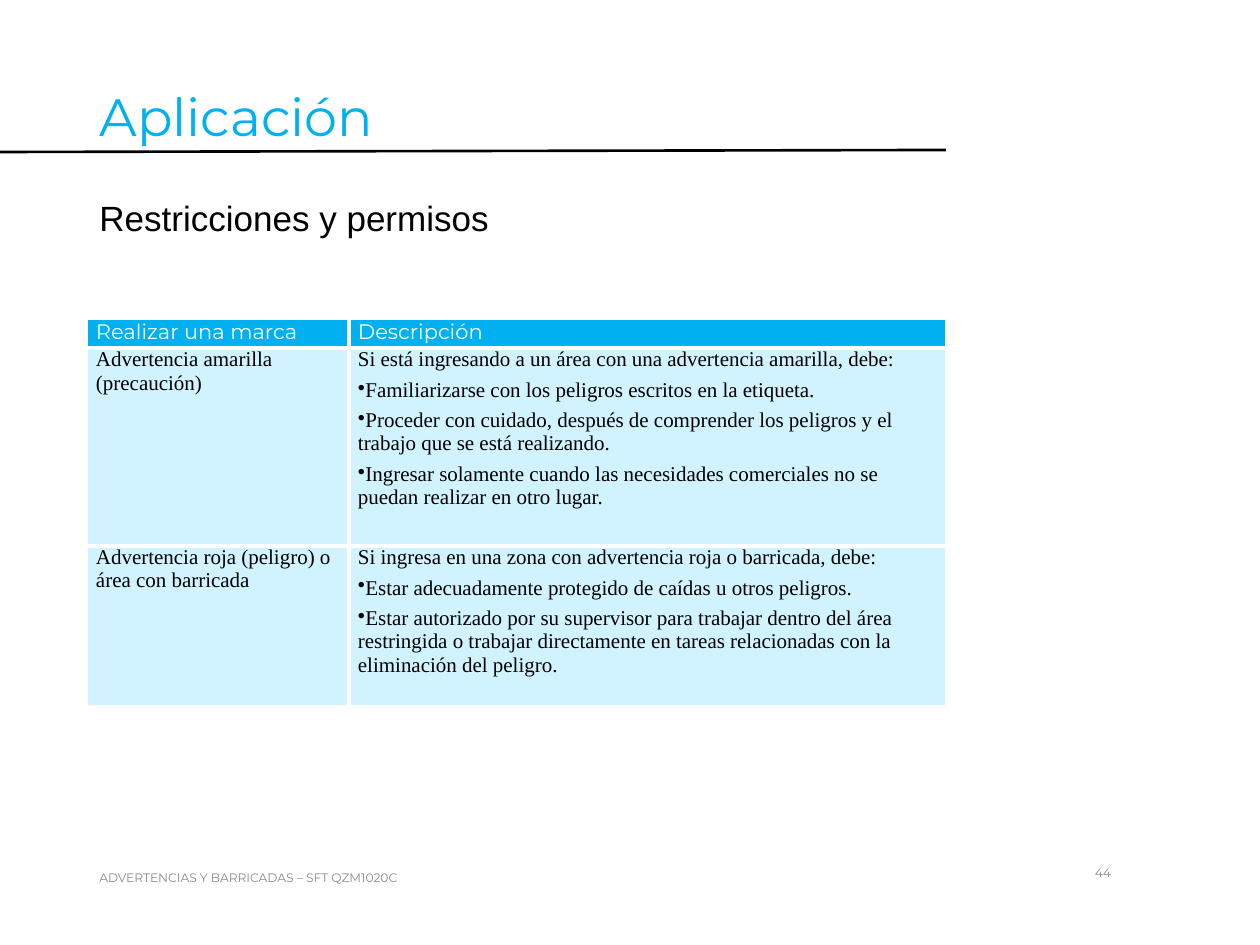
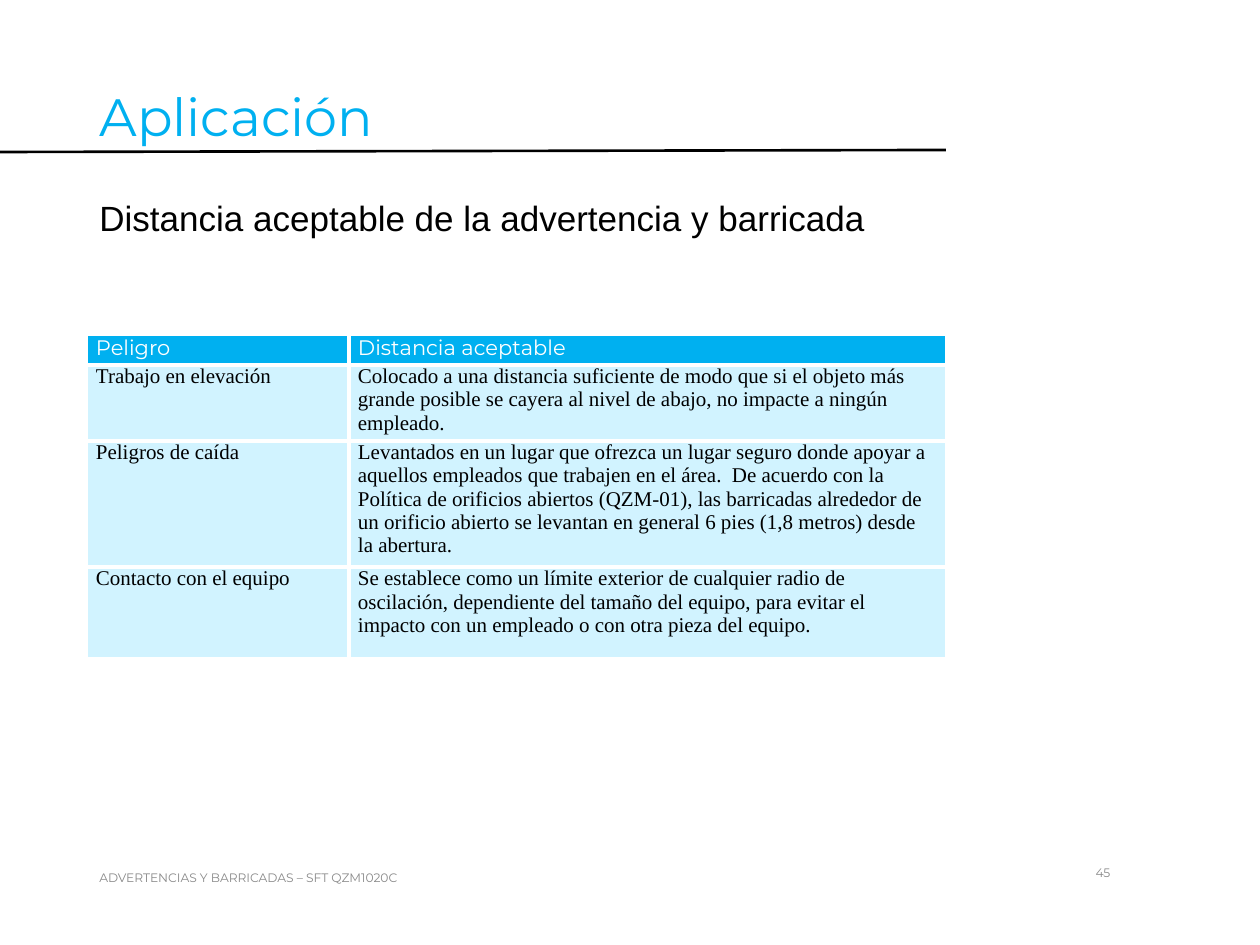
from dataclasses import dataclass

from lxml.etree import SubElement
from pptx import Presentation
from pptx.dml.color import RGBColor as Color
from pptx.enum.shapes import MSO_CONNECTOR as Connector
from pptx.enum.text import MSO_ANCHOR as Anchor, MSO_AUTO_SIZE as AutoSize, PP_ALIGN as Align
from pptx.oxml.ns import qn
from pptx.util import Emu, Pt

PX_PER_INCH = 126
TITLE_ONLY = 5
BULLET = "•"


@dataclass(frozen=True)
class TextStyle:
    font: str
    size: int
    color: str


@dataclass(frozen=True)
class Theme:
    accent: str = "00B0F0"
    body_fill: str = "D1F3FF"
    white: str = "FFFFFF"
    black: str = "000000"
    title: TextStyle = TextStyle("Montserrat", 30, "00B0F0")
    subtitle: TextStyle = TextStyle("Arial", 20, "000000")
    header: TextStyle = TextStyle("Montserrat", 12, "FFFFFF")
    body: TextStyle = TextStyle("Times New Roman", 12, "000000")
    footer: TextStyle = TextStyle("Montserrat", 7, "898989")
    rule_width: float = 1.5
    border_width: int = 3


def px(length):
    return Emu(round(length * 914400 / PX_PER_INCH))


class Deck:
    LEFT, WIDTH = 87, 859
    RIGHT = LEFT + WIDTH
    COLUMNS = (262, 597)

    def __init__(self, theme):
        self.theme = theme
        self.presentation = Presentation()
        self.presentation.slide_width = px(1260)
        self.presentation.slide_height = px(945)
        self.slide = None

    def add_slide(self, title, subtitle, number):
        """Start a slide with the title, rule and footer that all slides share."""
        layout = self.presentation.slide_layouts[TITLE_ONLY]
        self.slide = self.presentation.slides.add_slide(layout)
        self.rule(0, 152, self.RIGHT, 150)
        self.text(subtitle, (self.LEFT, 190, self.WIDTH, 645), self.theme.subtitle, space=6)
        self.title(title)
        self.text(str(number), (self.RIGHT, 848, 314, 50), self.theme.footer,
                  Anchor.MIDDLE, Align.CENTER)
        self.text("ADVERTENCIAS Y BARRICADAS – SFT QZM1020C",
                  (self.LEFT, 853, 756, 50), self.theme.footer, Anchor.MIDDLE)

    def style(self, paragraph, style, align=Align.LEFT, space=0):
        paragraph.alignment = align
        paragraph.space_before = paragraph.space_after = Pt(space)
        font = paragraph.font
        font.name, font.size, font.bold = style.font, Pt(style.size), False
        font.color.rgb = Color.from_string(style.color)

    def place(self, shape, box):
        shape.left, shape.top, shape.width, shape.height = map(px, box)

    def title(self, text):
        shape = self.slide.shapes.title
        self.place(shape, (self.LEFT, 85, self.WIDTH, 89))
        frame = shape.text_frame
        frame.text = text
        frame.auto_size = AutoSize.NONE
        frame.vertical_anchor = Anchor.TOP
        paragraph = frame.paragraphs[0]
        self.style(paragraph, self.theme.title)
        paragraph.line_spacing = 0.9
        paragraph.space_before = Pt(10)

    def text(self, text, box, style, anchor=Anchor.TOP, align=Align.LEFT, space=0):
        frame = self.slide.shapes.add_textbox(*map(px, box)).text_frame
        frame.word_wrap = True
        frame.vertical_anchor = anchor
        frame.text = text
        self.style(frame.paragraphs[0], style, align, space)

    def rule(self, *ends):
        line = self.slide.shapes.add_connector(Connector.STRAIGHT, *map(px, ends))
        line.line.color.rgb = Color.from_string(self.theme.black)
        line.line.width = Pt(self.theme.rule_width)
        SubElement(line._element.spPr, qn("a:effectLst"))

    def table(self, top, heights, rows):
        box = (self.LEFT, top, self.WIDTH, sum(heights))
        table = self.slide.shapes.add_table(
            len(rows), len(self.COLUMNS), *map(px, box)).table
        table.first_row = table.horz_banding = False
        for column, width in zip(table.columns, self.COLUMNS):
            column.width = px(width)
        for row, height in zip(table.rows, heights):
            row.height = px(height)
        last_row, last_column = len(rows) - 1, len(self.COLUMNS) - 1
        for row, texts in enumerate(rows):
            for column, text in enumerate(texts):
                # Only the inner edges have a border
                edges = {"lnL": column > 0, "lnR": column < last_column,
                         "lnT": row > 0, "lnB": row < last_row}
                inner = [edge for edge, shown in edges.items() if shown]
                self.cell(table.cell(row, column), text, row == 0, inner)

    def cell(self, cell, text, is_header, edges):
        theme = self.theme
        cell.margin_left, cell.margin_right = px(9), px(11)
        cell.margin_top = cell.margin_bottom = 0
        for edge in edges:
            self.border(cell, edge)
        cell.fill.solid()
        cell.fill.fore_color.rgb = Color.from_string(
            theme.accent if is_header else theme.body_fill)
        lines = text.split("\n")
        cell.text_frame.text = "\n".join(line.removeprefix(BULLET) for line in lines)
        for paragraph, line in zip(cell.text_frame.paragraphs, lines):
            self.style(paragraph, theme.header if is_header else theme.body, space=2)
            if line.startswith(BULLET):
                self.bullet(paragraph)

    def border(self, cell, edge):
        properties = cell._tc.get_or_add_tcPr()
        line = SubElement(properties, qn(f"a:{edge}"), w=str(Pt(self.theme.border_width)))
        fill = SubElement(line, qn("a:solidFill"))
        SubElement(fill, qn("a:srgbClr"), val=self.theme.white)

    def bullet(self, paragraph):
        properties = paragraph._p.get_or_add_pPr()
        properties.set("marL", "0")
        properties.set("indent", "0")
        mark = SubElement(properties, qn("a:buChar"), char=BULLET)
        properties.find(qn("a:defRPr")).addprevious(mark)


def main():
    deck = Deck(Theme())

    # Restrictions and permits
    deck.add_slide("Aplicación", "Restricciones y permisos", 44)
    deck.table(319, (29, 198, 160), [
        ("Realizar una marca", "Descripción"),
        ("Advertencia amarilla (precaución)",
         "Si está ingresando a un área con una advertencia amarilla, debe:\n"
         "•Familiarizarse con los peligros escritos en la etiqueta.\n"
         "•Proceder con cuidado, después de comprender los peligros y el trabajo "
         "que se está realizando.\n"
         "•Ingresar solamente cuando las necesidades comerciales no se puedan "
         "realizar en otro lugar."),
        ("Advertencia roja (peligro) o área con barricada",
         "Si ingresa en una zona con advertencia roja o barricada, debe:\n"
         "•Estar adecuadamente protegido de caídas u otros peligros.\n"
         "•Estar autorizado por su supervisor para trabajar dentro del área "
         "restringida o trabajar directamente en tareas relacionadas con la "
         "eliminación del peligro."),
    ])

    # Acceptable distances
    deck.add_slide("Aplicación", "Distancia aceptable de la advertencia y barricada", 45)
    deck.table(335, (30, 76, 126, 91), [
        ("Peligro", "Distancia aceptable"),
        ("Trabajo en elevación",
         "Colocado a una distancia suficiente de modo que si el objeto más grande "
         "posible se cayera al nivel de abajo, no impacte a ningún empleado."),
        ("Peligros de caída",
         "Levantados en un lugar que ofrezca un lugar seguro donde apoyar a aquellos "
         "empleados que trabajen en el área.  De acuerdo con la Política de orificios "
         "abiertos (QZM-01), las barricadas alrededor de un orificio abierto se "
         "levantan en general 6 pies (1,8 metros) desde la abertura."),
        ("Contacto con el equipo",
         "Se establece como un límite exterior de cualquier radio de oscilación, "
         "dependiente del tamaño del equipo, para evitar el impacto con un empleado "
         "o con otra pieza del equipo."),
    ])

    deck.presentation.save("out.pptx")


if __name__ == "__main__":
    main()
